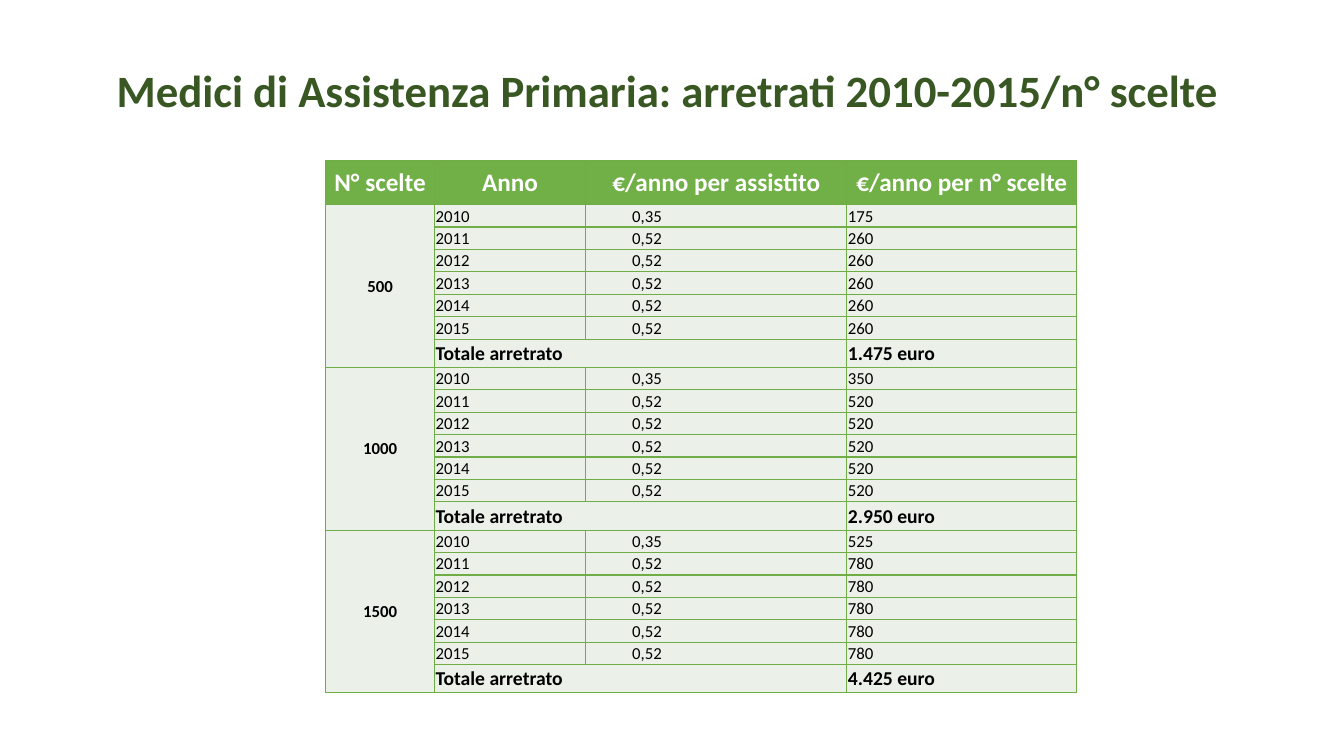
from lxml.etree import SubElement
from pptx import Presentation
from pptx.dml.color import RGBColor
from pptx.enum.text import MSO_ANCHOR, PP_ALIGN
from pptx.oxml.ns import qn
from pptx.util import Inches, Pt

WHITE = RGBColor(0xFF, 0xFF, 0xFF)
BLACK = RGBColor(0, 0, 0)
TITLE_GREEN = RGBColor(0x38, 0x57, 0x23)
HEADER_GREEN = RGBColor(0x71, 0xAF, 0x47)
BORDER_GREEN = RGBColor(0x70, 0xAD, 0x47)
BODY_GREEN = RGBColor(0xEB, 0xF1, 0xE9)

FONT = "Calibri"
TITLE = "Medici di Assistenza Primaria: arretrati 2010-2015/n° scelte"
HEADERS = ["N° scelte", "Anno", "€/anno per assistito", "€/anno per n° scelte"]
CHOICES = [500, 1000, 1500]
CENTS_BY_YEAR = {2010: 35, 2011: 52, 2012: 52, 2013: 52, 2014: 52, 2015: 52}
GROUP_ROWS = len(CENTS_BY_YEAR) + 1
COLUMN_WIDTHS = [1.08, 1.5, 2.59, 2.28]
HEADER_HEIGHT = 0.44
TOTAL_HEIGHT = 0.28
TITLE_BOX = (0.62, 0.63, 12.01, 0.47)
TABLE_BOX = (3.23, 1.59, 7.45, 5.29)


def add_span(para, text, size, color, bold):
    span = para.add_run()
    span.text = text
    span.font.name = FONT
    span.font.size = Pt(size)
    span.font.bold = bold
    span.font.color.rgb = color
    return span


def add_title(page, box):
    title = page.shapes.title
    title.left, title.top, title.width, title.height = map(Inches, box)
    frame = title.text_frame
    frame.word_wrap = True
    frame.vertical_anchor = MSO_ANCHOR.TOP
    para = frame.paragraphs[0]
    para.alignment = PP_ALIGN.CENTER
    para.line_spacing = 0.9
    add_span(para, TITLE, 32, TITLE_GREEN, True)


def style_cell(cell, fill):
    cell.fill.solid()
    cell.fill.fore_color.rgb = fill
    cell.vertical_anchor = MSO_ANCHOR.MIDDLE
    cell.margin_left = cell.margin_top = cell.margin_right = Inches(0.01)
    cell.margin_bottom = 0
    properties = cell._tc.get_or_add_tcPr()
    for index, side in enumerate(["a:lnL", "a:lnR", "a:lnT", "a:lnB"]):
        line = SubElement(properties, qn(side), w=str(Pt(1)))
        solid = SubElement(line, qn("a:solidFill"))
        SubElement(solid, qn("a:srgbClr"), val=str(BORDER_GREEN))
        properties.insert(index, line)


def write_cell(cell, text, size=12, color=BLACK, bold=False, align=PP_ALIGN.LEFT):
    para = cell.text_frame.paragraphs[0]
    para.alignment = align
    add_span(para, text, size, color, bold)


def fill_group(table, first, choices):
    last = first + GROUP_ROWS - 1
    table.cell(first, 0).merge(table.cell(last, 0))
    write_cell(table.cell(first, 0), str(choices), bold=True, align=PP_ALIGN.CENTER)
    total = 0
    for row, (year, cents) in enumerate(CENTS_BY_YEAR.items(), first):
        amount = choices * cents // 100
        total += amount
        write_cell(table.cell(row, 1), str(year))
        write_cell(table.cell(row, 2), f"0,{cents}")
        table.cell(row, 2).margin_left = Inches(0.46)
        write_cell(table.cell(row, 3), str(amount))
    table.cell(last, 1).merge(table.cell(last, 2))
    write_cell(table.cell(last, 1), "Totale arretrato", 14, bold=True)
    write_cell(table.cell(last, 3), f"{total:,} euro".replace(",", "."), 14, bold=True)


def add_arrears_table(page, box):
    row_count = 1 + len(CHOICES) * GROUP_ROWS
    table = page.shapes.add_table(row_count, len(HEADERS), *map(Inches, box)).table
    for column, width in zip(table.columns, COLUMN_WIDTHS):
        column.width = Inches(width)
    years_height = box[3] - HEADER_HEIGHT - len(CHOICES) * TOTAL_HEIGHT
    year_height = years_height / (len(CHOICES) * len(CENTS_BY_YEAR))
    for index, row in enumerate(table.rows):
        height = TOTAL_HEIGHT if index % GROUP_ROWS == 0 else year_height
        row.height = Inches(height if index else HEADER_HEIGHT)
        for cell in row.cells:
            style_cell(cell, BODY_GREEN if index else HEADER_GREEN)
    for column, header in enumerate(HEADERS):
        write_cell(table.cell(0, column), header, 18, WHITE, True, PP_ALIGN.CENTER)
    for group, choices in enumerate(CHOICES):
        fill_group(table, 1 + group * GROUP_ROWS, choices)


def main():
    deck = Presentation()
    deck.slide_width = Inches(13.33)
    deck.slide_height = Inches(7.5)
    page = deck.slides.add_slide(deck.slide_layouts[5])
    add_title(page, TITLE_BOX)
    add_arrears_table(page, TABLE_BOX)
    deck.save("out.pptx")


if __name__ == "__main__":
    main()
